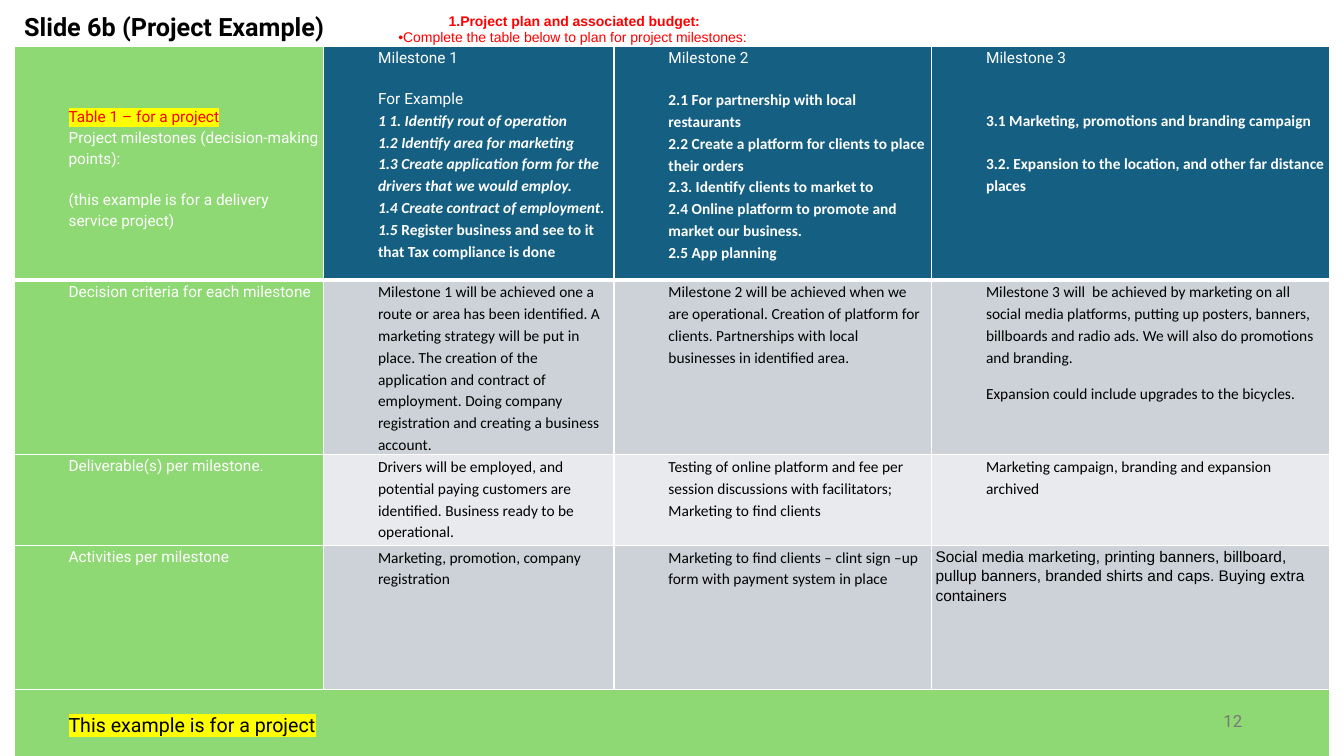
"""Build the project milestone slide with its planning table."""
import dataclasses
import functools

import pptx
import pptx.dml.color
import pptx.enum.text
import pptx.oxml
import pptx.oxml.ns
import pptx.util

Inches, Pt = pptx.util.Inches, pptx.util.Pt
Anchor, Align = pptx.enum.text.MSO_ANCHOR, pptx.enum.text.PP_ALIGN
NS = pptx.oxml.ns.nsdecls("a")
WHITE, BLACK, RED, YELLOW = "FFFFFF", "000000", "FF0000", "FFFF00"
GREEN, BLUE, GREY, PALE = "8ED973", "156082", "CCD2D8", "E8EAED"
COLS = (3.07, 2.88, 3.15, 3.95)
ROWS = (2.32, 1.73, 0.9, 1.43, 0.66)


@dataclasses.dataclass
class Line:
    text: str
    font: str = "Roboto"
    color: str = WHITE
    size: float = 11
    bold: bool = False
    slant: bool = False
    mark: str = ""
    dent: float = 0.5
    before: float = 0
    pitch: float = 1.15
    join: bool = False


@dataclasses.dataclass
class Cell:
    lines: list[Line]
    fill: str
    top: float = 0


Note = functools.partial(Line, font="Calibri", color=BLACK)
Step = functools.partial(Line, font="Calibri", bold=True)
Task = functools.partial(Step, slant=True)


def xml(text: str):
    return pptx.oxml.parse_xml(text)


def paint(fill, color: str) -> None:
    fill.solid()
    fill.fore_color.rgb = pptx.dml.color.RGBColor.from_string(color)


def put(frame, text: str, *, font="Roboto", color=BLACK, size=11, bold=False,
        slant=False, mark="", dent=0, before=0, pitch=1.0, join=False,
        align=Align.LEFT, bullet=""):
    para = frame.paragraphs[-1]
    if para.runs and not join:
        para = frame.add_paragraph()
    para.alignment, para.line_spacing = align, pitch
    para.space_before, para.space_after = Pt(before), Pt(0)
    props = para._p.get_or_add_pPr()
    props.set("marL", str(Inches(dent)))
    props.set("indent", "0")
    if bullet:
        props.append(xml(f"<a:{bullet} {NS}/>"))
    run = para.add_run()
    run.text = text
    run.font.name, run.font.size = font, Pt(size)
    run.font.bold, run.font.italic = bold, slant
    paint(run.font.fill, color)
    if mark:
        ink = run._r.rPr.find(pptx.oxml.ns.qn("a:solidFill"))
        ink.addnext(xml(f'<a:highlight {NS}><a:srgbClr val="{mark}"/></a:highlight>'))
    return para


def place(shape, left: float, top: float, width: float, height: float,
          pads: tuple, anchor=Anchor.TOP):
    shape.left, shape.top = Inches(left), Inches(top)
    shape.width, shape.height = Inches(width), Inches(height)
    frame = shape.text_frame
    frame.word_wrap, frame.vertical_anchor = True, anchor
    frame.auto_size = pptx.enum.text.MSO_AUTO_SIZE.NONE
    (frame.margin_left, frame.margin_top,
     frame.margin_right, frame.margin_bottom) = map(Inches, pads)
    return frame


def edge(cell, first: bool) -> None:
    props = cell._tc.get_or_add_tcPr()
    for side in "LRTB":
        width = Pt(3 if first and side == "B" else 1)
        props.append(xml(
            f'<a:ln{side} {NS} w="{width}"><a:solidFill>'
            f'<a:srgbClr val="{WHITE}"/></a:solidFill></a:ln{side}>'))


def draw(cell, data: Cell, first: bool) -> None:
    edge(cell, first)
    paint(cell.fill, data.fill)
    cell.margin_left = cell.margin_right = Inches(0.04)
    cell.margin_top, cell.margin_bottom = Inches(data.top), 0
    for line in data.lines:
        put(cell.text_frame, **dataclasses.asdict(line))


GRID = [
    [
        Cell([Line("Table 1 – for a project", color=RED, mark=YELLOW),
              Line("Project milestones (decision-making points):"),
              Line("(this example is for a delivery service project)", before=15)],
             GREEN, 0.59),
        Cell([Line("Milestone 1"),
              Line("For Example", before=15),
              Task("1 1. Identify rout of operation"),
              Task("1.2 Identify area for marketing"),
              Task("1.3 Create application form for the drivers that we would employ."),
              Task("1.4 Create contract of employment."),
              Task("1.5 "),
              Step("Register business and see to it that Tax compliance is done",
                   join=True)], BLUE),
        Cell([Line("Milestone 2"),
              Step("2.1 For partnership with local restaurants", before=15),
              Step("2.2 Create a platform for clients to place their orders"),
              Step("2.3. Identify clients to market to"),
              Step("2.4 Online platform to promote and market our business."),
              Step("2.5 App planning")], BLUE),
        Cell([Line("Milestone 3"),
              Step("3.1 Marketing, promotions and branding campaign", before=30),
              Step("3.2. Expansion to the location, and other far distance places",
                   before=15)], BLUE),
    ],
    [
        Cell([Line("Decision criteria for each milestone")], GREEN),
        Cell([Note("Milestone 1 will be achieved one a route or area has been "
                   "identified. A marketing strategy will be put in place. The "
                   "creation of the application and contract of employment. Doing "
                   "company registration and creating a business account.")], GREY),
        Cell([Note("Milestone 2 will be achieved when we are operational. Creation "
                   "of platform for clients. Partnerships with local businesses in "
                   "identified area.")], GREY),
        Cell([Note("Milestone 3 will  be achieved by marketing on all social media "
                   "platforms, putting up posters, banners, billboards and radio ads. "
                   "We will also do promotions and branding."),
              Note("Expansion could include upgrades to the bicycles.", before=10)],
             GREY),
    ],
    [
        Cell([Line("Deliverable(s) per milestone.")], GREEN),
        Cell([Note("Drivers will be employed, and potential paying customers are "
                   "identified. Business ready to be operational.")], PALE),
        Cell([Note("Testing of online platform and fee per session discussions with "
                   "facilitators; Marketing to find clients")], PALE),
        Cell([Note("Marketing campaign, branding and expansion archived")], PALE),
    ],
    [
        Cell([Line("Activities per milestone")], GREEN),
        Cell([Note("Marketing, promotion, company registration")], GREY),
        Cell([Note("Marketing to find clients – clint sign –up form with payment "
                   "system in place")], GREY),
        Cell([Note("Social media marketing, printing banners, billboard, pullup "
                   "banners, branded shirts and caps. Buying extra containers",
                   font="Arial", dent=0)], GREY),
    ],
    [Cell([Line("This example is for a project", color=BLACK, size=14,
                mark=YELLOW)], GREEN, 0.21)],
]


def main() -> None:
    deck = pptx.Presentation()
    deck.slide_width, deck.slide_height = Inches(13.33), Inches(7.5)
    slide = deck.slides.add_slide(deck.slide_layouts[1])
    title, body = slide.placeholders

    frame = place(title, 0.14, 0.06, 3.23, 0.4, (0.1, 0.05, 0, 0.05))
    put(frame, "Slide 6b (Project Example)", size=18, bold=True)

    frame = place(body, 3.65, 0.06, 3.93, 0.69, (0.3, 0.06, 0.1, 0))
    red = functools.partial(put, frame, font="Arial", color=RED, size=10)
    red("Project plan and associated budget:", bold=True, dent=0.5,
        bullet='buAutoNum type="arabicPeriod"').level = 1
    red("Complete the table below to plan for project milestones:",
        bullet='buChar char="•"')

    table = slide.shapes.add_table(
        len(ROWS), len(COLS), Inches(0.14), Inches(0.46),
        Inches(sum(COLS)), Inches(sum(ROWS))).table
    table.first_row = table.horz_banding = False
    for col, width in zip(table.columns, COLS):
        col.width = Inches(width)
    for row, height in zip(table.rows, ROWS):
        row.height = Inches(height)
    table.cell(4, 0).merge(table.cell(4, 3))
    for r, cells in enumerate(GRID):
        for c, data in enumerate(cells):
            draw(table.cell(r, c), data, r == 0)

    box = slide.shapes.add_textbox(0, 0, 0, 0)
    frame = place(box, 9.42, 6.95, 3, 0.4, (0.1, 0.05, 0.1, 0.05), Anchor.MIDDLE)
    put(frame, "12", size=12, color="797979", align=Align.RIGHT)
    deck.save("out.pptx")


if __name__ == "__main__":
    main()
